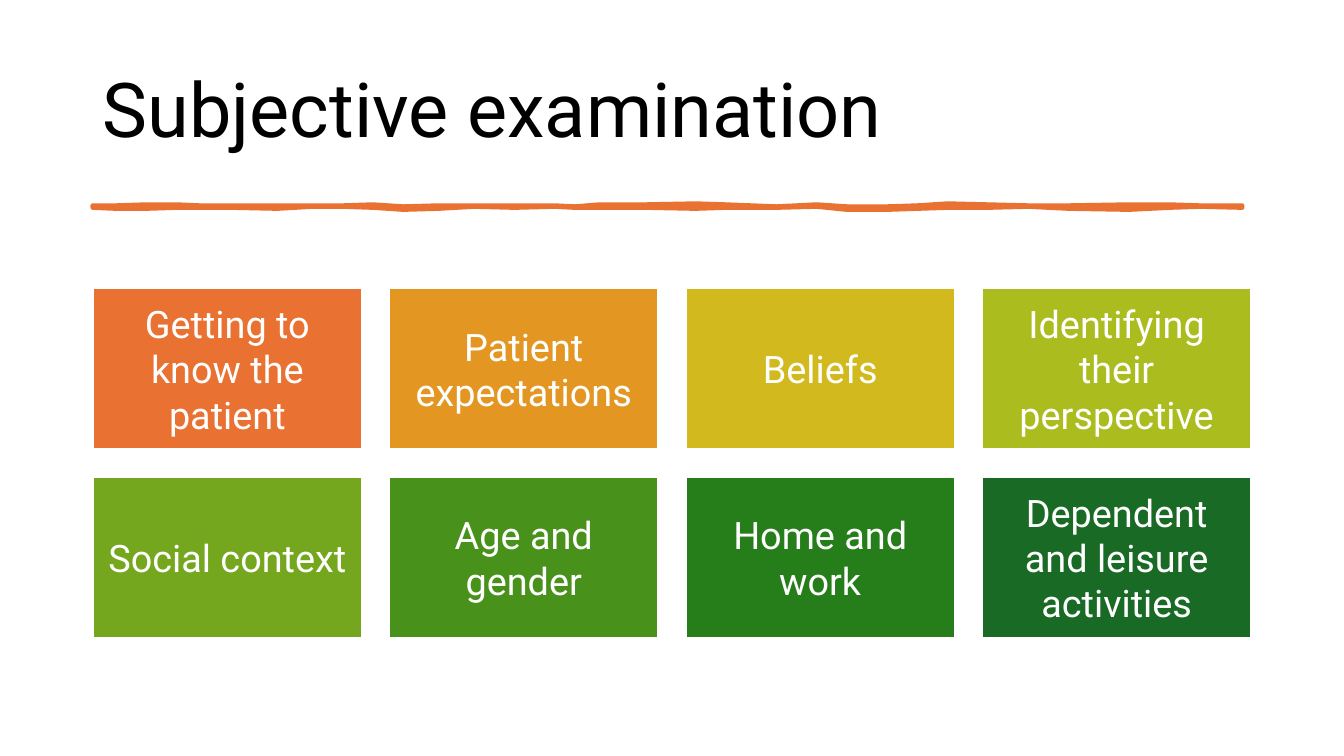
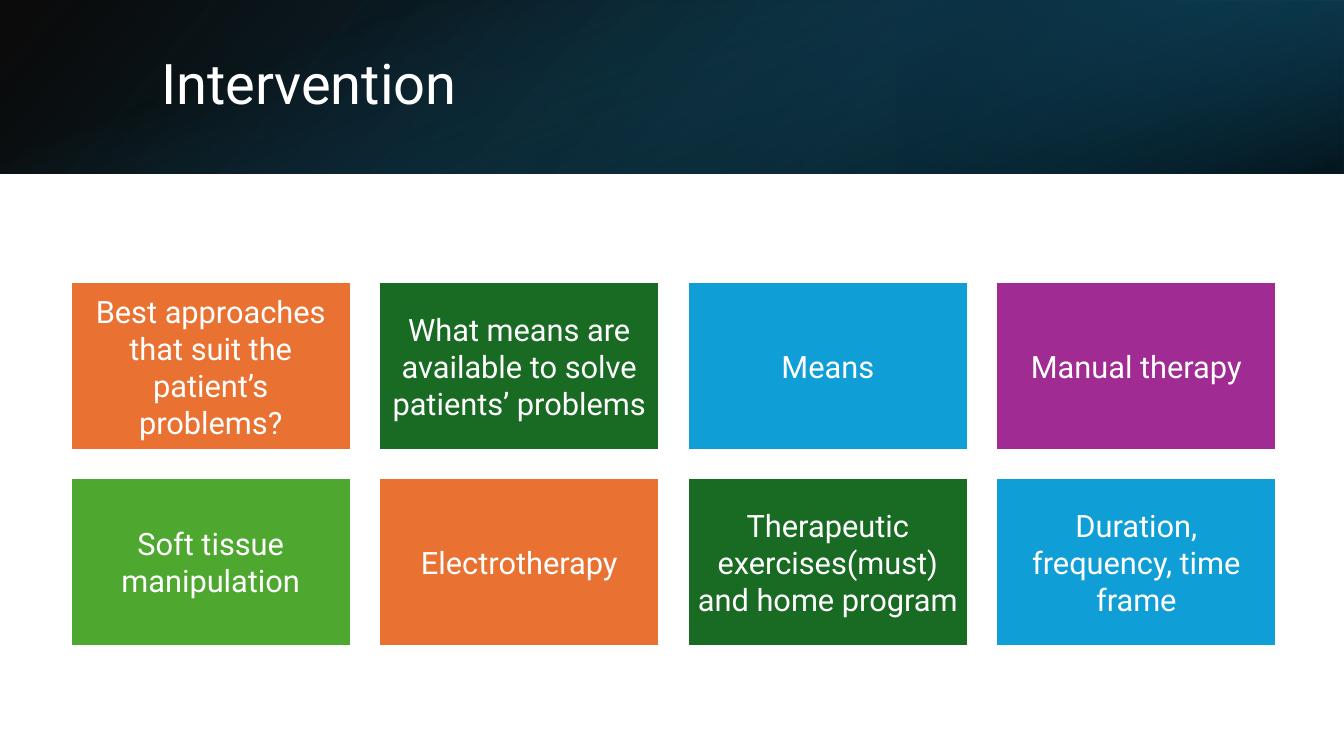
import dataclasses
import typing

import lxml.etree
import pptx
import pptx.dml.color
import pptx.enum.shapes
import pptx.enum.text
import pptx.oxml.ns
import pptx.util

Inches = pptx.util.Inches
RGB = pptx.dml.color.RGBColor

FONT = "Roboto"
WHITE = RGB(0xFF, 0xFF, 0xFF)
BLACK = RGB(0x00, 0x00, 0x00)
ORANGE = RGB(0xE9, 0x71, 0x32)
AMBER = RGB(0xE4, 0x96, 0x22)
MUSTARD = RGB(0xD2, 0xB9, 0x1E)
LIME = RGB(0xAA, 0xBC, 0x1E)
OLIVE = RGB(0x74, 0xA7, 0x1D)
LEAF = RGB(0x48, 0x92, 0x1C)
FOREST = RGB(0x26, 0x7E, 0x1B)
PINE = RGB(0x19, 0x6A, 0x25)
DARK_GREEN = RGB(0x19, 0x6B, 0x24)
GREEN = RGB(0x4E, 0xA7, 0x2E)
BLUE = RGB(0x0F, 0x9E, 0xD5)
PURPLE = RGB(0xA0, 0x2B, 0x93)
DEEP_TEAL = RGB(0x10, 0x48, 0x62)
NIGHT_TEAL = RGB(0x0B, 0x30, 0x41)
TEAL = RGB(0x15, 0x60, 0x82)

COLUMNS = 4
BAND_HEIGHT = 1.72
SLIDE_WIDTH = 13.33


class Box(typing.NamedTuple):
    left: float
    top: float
    width: float
    height: float


class Topic(typing.NamedTuple):
    label: str
    color: RGB


class Stop(typing.NamedTuple):
    position: float
    color: RGB
    opacity: int


@dataclasses.dataclass(frozen=True)
class TopicGrid:
    first: Box
    column_step: float
    row_step: float
    size: float
    inset: float
    topics: tuple[Topic, ...]


@dataclasses.dataclass(frozen=True)
class Shade:
    box: Box
    angle: float
    stops: tuple[Stop, Stop]
    rotation: float = 0
    flipped: bool = False


class StrokePoint(typing.NamedTuple):
    x: float
    top: float
    bottom: float


BRUSH_STROKE = tuple(StrokePoint(*point) for point in (
    (0.92, 2.04, 2.06), (1.15, 2.04, 2.07), (1.45, 2.03, 2.07),
    (1.75, 2.03, 2.06), (1.98, 2.04, 2.06), (2.3, 2.04, 2.06),
    (2.75, 2.04, 2.07), (3.1, 2.04, 2.05), (3.4, 2.04, 2.05),
    (3.7, 2.03, 2.06), (4, 2.05, 2.08), (4.35, 2.04, 2.07),
    (4.7, 2.04, 2.05), (5.1, 2.04, 2.06), (5.5, 2.04, 2.05),
    (5.7, 2.05, 2.06), (5.95, 2.03, 2.06), (6.4, 2.03, 2.06),
    (6.9, 2.02, 2.07), (7.2, 2.03, 2.06), (7.7, 2.05, 2.06),
    (8.1, 2.03, 2.05), (8.4, 2.05, 2.08), (8.8, 2.05, 2.08),
    (9.1, 2.04, 2.07), (9.4, 2.02, 2.06), (9.8, 2.03, 2.06),
    (10.2, 2.04, 2.05), (10.6, 2.04, 2.07), (11.2, 2.03, 2.08),
    (11.6, 2.03, 2.06), (11.9, 2.04, 2.05), (12.32, 2.04, 2.06),
))

SUBJECTIVE_TOPICS = TopicGrid(
    Box(0.92, 2.86, 2.67, 1.6), 2.94, 1.87, 27, 0.11,
    (
        Topic("Getting to know the patient", ORANGE),
        Topic("Patient expectations", AMBER),
        Topic("Beliefs", MUSTARD),
        Topic("Identifying their perspective", LIME),
        Topic("Social context", OLIVE),
        Topic("Age and gender", LEAF),
        Topic("Home and work", FOREST),
        Topic("Dependent and leisure activities", PINE),
    ),
)

INTERVENTION_TOPICS = TopicGrid(
    Box(0.7, 2.8, 2.78, 1.67), 3.06, 1.94, 22, 0.09,
    (
        Topic("Best approaches that suit the patient’s problems?", ORANGE),
        Topic("What means are available to solve patients’ problems", DARK_GREEN),
        Topic("Means", BLUE),
        Topic("Manual therapy", PURPLE),
        Topic("Soft tissue manipulation", GREEN),
        Topic("Electrotherapy", ORANGE),
        Topic("Therapeutic exercises(must) and home program", DARK_GREEN),
        Topic("Duration, frequency, time frame", BLUE),
    ),
)

BAND_SHADES = (
    Shade(Box(0, 0, SLIDE_WIDTH, BAND_HEIGHT), 140,
          (Stop(0, BLACK, 96), Stop(1, DEEP_TEAL, 100)), flipped=True),
    Shade(Box(8.89, 0, 4.44, BAND_HEIGHT), 320,
          (Stop(0.19, NIGHT_TEAL, 68), Stop(1, TEAL, 79)),
          rotation=180, flipped=True),
    Shade(Box(5.8, -5.8, BAND_HEIGHT, SLIDE_WIDTH), 340,
          (Stop(0.23, TEAL, 0), Stop(0.99, BLACK, 74)), rotation=90),
)


def lengths(box: Box) -> list[int]:
    return [Inches(value) for value in box]


def write_text(holder, text: str, *, size: float, color: RGB,
               align=pptx.enum.text.PP_ALIGN.LEFT, line_spacing: float = 1.0,
               inset_x: float = 0.1, inset_y: float = 0.05) -> None:
    frame = holder.text_frame
    frame.word_wrap = True
    frame.vertical_anchor = pptx.enum.text.MSO_ANCHOR.MIDDLE
    frame.margin_left = frame.margin_right = Inches(inset_x)
    frame.margin_top = frame.margin_bottom = Inches(inset_y)
    paragraph = frame.paragraphs[0]
    paragraph.alignment = align
    paragraph.line_spacing = line_spacing
    run = paragraph.add_run()
    run.text = text
    run.font.name = FONT
    run.font.size = pptx.util.Pt(size)
    run.font.color.rgb = color


def add_title(slide, text: str, box: Box, size: float, color: RGB) -> None:
    title = slide.shapes.add_textbox(*lengths(box))
    write_text(title, text, size=size, color=color, line_spacing=0.9)


def add_rectangle(slide, box: Box):
    rectangle = slide.shapes.add_shape(
        pptx.enum.shapes.MSO_SHAPE.RECTANGLE, *lengths(box))
    rectangle.shadow.inherit = False
    return rectangle


def paint(shape, fill: RGB, line: RGB, width: float) -> None:
    shape.fill.solid()
    shape.fill.fore_color.rgb = fill
    shape.line.color.rgb = line
    shape.line.width = pptx.util.Pt(width)


def add_topics(slide, grid: TopicGrid) -> None:
    for index, topic in enumerate(grid.topics):
        row, column = divmod(index, COLUMNS)
        tile = add_rectangle(slide, grid.first._replace(
            left=grid.first.left + column * grid.column_step,
            top=grid.first.top + row * grid.row_step))
        paint(tile, topic.color, WHITE, 1.5)
        write_text(tile, topic.label, size=grid.size, color=WHITE,
                   align=pptx.enum.text.PP_ALIGN.CENTER,
                   inset_x=grid.inset, inset_y=grid.inset)


def add_brush_stroke(slide) -> None:
    upper = [(Inches(point.x), Inches(point.top)) for point in BRUSH_STROKE]
    lower = [(Inches(point.x), Inches(point.bottom)) for point in BRUSH_STROKE]
    builder = slide.shapes.build_freeform(*upper[0])
    builder.add_line_segments(upper[1:] + lower[::-1], close=True)
    stroke = builder.convert_to_shape()
    stroke.shadow.inherit = False
    paint(stroke, ORANGE, ORANGE, 3.25)


def add_shade(slide, shade: Shade) -> None:
    panel = add_rectangle(slide, shade.box)
    panel.line.fill.background()
    panel.rotation = shade.rotation
    if shade.flipped:
        panel.element.spPr.get_or_add_xfrm().set("flipH", "1")
    panel.fill.gradient()
    panel.fill.gradient_angle = 360 - shade.angle
    for target, stop in zip(panel.fill.gradient_stops, shade.stops):
        target.position = stop.position
        target.color.rgb = stop.color
    colors = panel.element.spPr.iter(pptx.oxml.ns.qn("a:srgbClr"))
    for color, stop in zip(list(colors), shade.stops):
        alpha = lxml.etree.SubElement(color, pptx.oxml.ns.qn("a:alpha"))
        alpha.set("val", str(stop.opacity * 1000))


def add_subjective_examination(slide) -> None:
    add_title(slide, "Subjective examination",
              Box(0.92, 0.4, 11.5, 1.45), 54, BLACK)
    add_brush_stroke(slide)
    add_topics(slide, SUBJECTIVE_TOPICS)


def add_intervention(slide) -> None:
    for shade in BAND_SHADES:
        add_shade(slide, shade)
    add_title(slide, "Intervention", Box(1.5, 0.38, 10.98, 0.96), 40, WHITE)
    add_topics(slide, INTERVENTION_TOPICS)


def main() -> None:
    deck = pptx.Presentation()
    deck.slide_width = Inches(SLIDE_WIDTH)
    deck.slide_height = Inches(7.5)
    blank = deck.slide_layouts[6]
    for build in (add_subjective_examination, add_intervention):
        build(deck.slides.add_slide(blank))
    deck.save("out.pptx")


if __name__ == "__main__":
    main()
